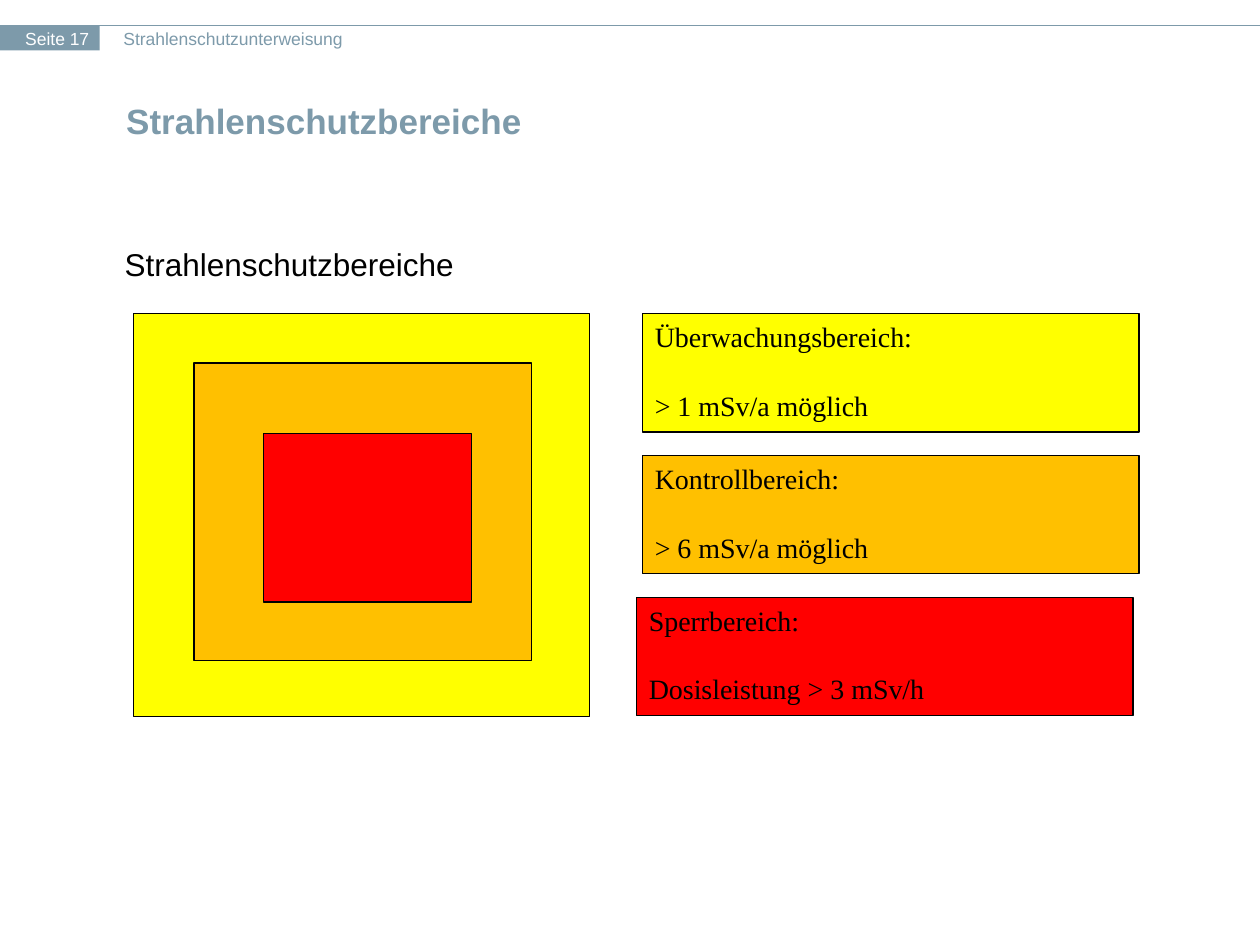
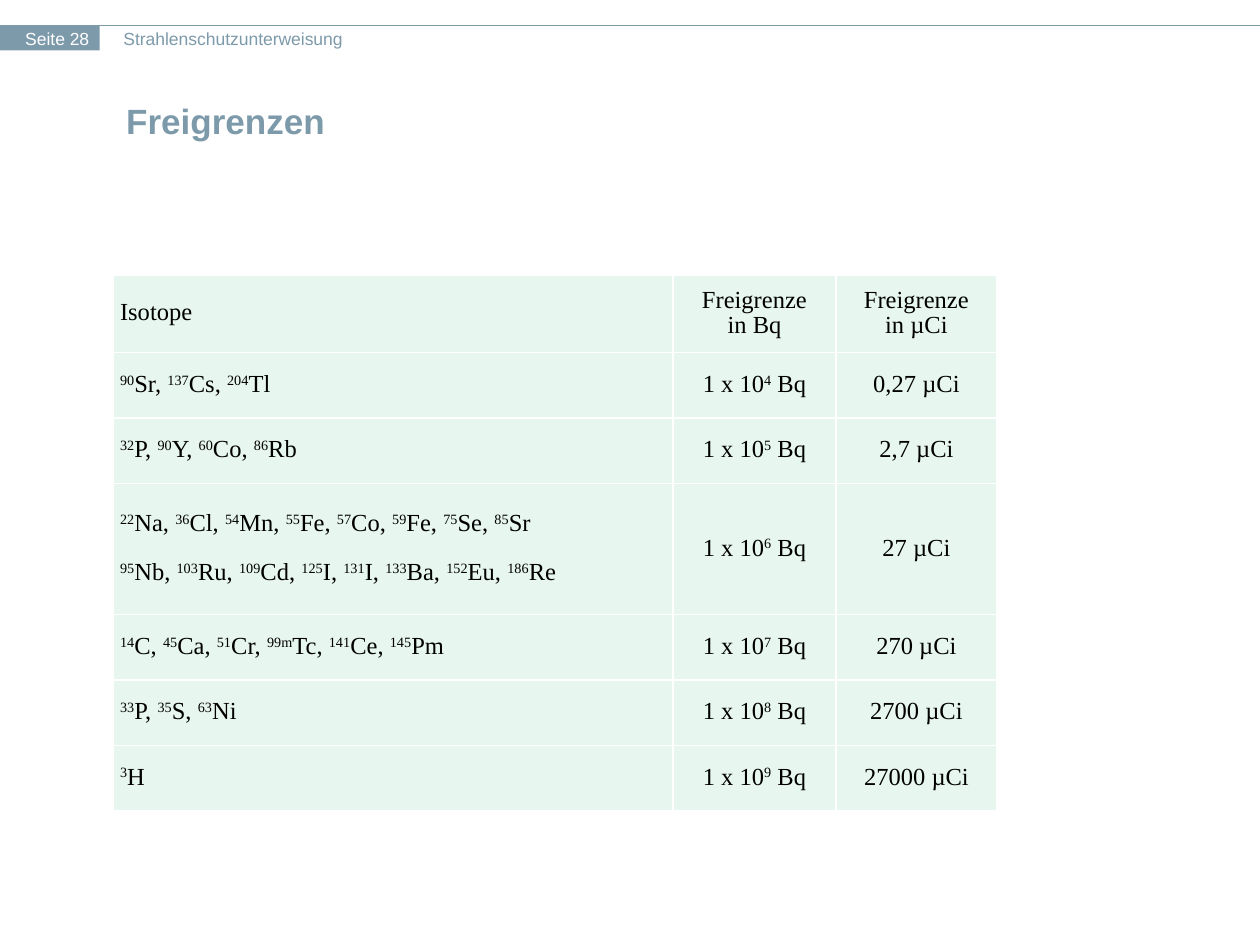
from lxml import etree
from pptx import Presentation
from pptx import util as u
from pptx.dml.color import RGBColor
from pptx.enum import shapes, text
from pptx.oxml import ns

SLATE, BLACK, WHITE, MINT = "7D9AAA", "000000", "FFFFFF", "E7F6EF"
YELLOW, ORANGE, RED = "FFFF00", "FFC000", "FF0000"
SANS, SERIF = "Arial", "Times New Roman"
LEFT, CENTER = text.PP_ALIGN.LEFT, text.PP_ALIGN.CENTER
TOP, MIDDLE = text.MSO_ANCHOR.TOP, text.MSO_ANCHOR.MIDDLE

COURSE = "Strahlenschutzunterweisung"
AREAS_TITLE, AREAS_PAGE = "Strahlenschutzbereiche", 17
LIMITS_TITLE, LIMITS_PAGE = "Freigrenzen", 28

# Colour, nested rectangle (cm), left edge of the legend box (cm), legend lines
AREAS = [
    (YELLOW, (2.69, 6.32, 9.19, 8.13), 12.95, ["Überwachungsbereich:", "> 1 mSv/a möglich"]),
    (ORANGE, (3.91, 7.32, 6.81, 5.99), 12.95, ["Kontrollbereich:", "> 6 mSv/a möglich"]),
    (RED, (5.31, 8.74, 4.19, 3.4), 12.83, ["Sperrbereich:", "Dosisleistung > 3 mSv/h"]),
]
LEGEND_TOP, LEGEND_STEP, LEGEND_WIDTH, LEGEND_HEIGHT = 6.32, 2.86, 10.01, 2.39

# Text between two carets is superscript
LIMITS_HEADER = ["Isotope", "Freigrenze\nin Bq", "Freigrenze\nin µCi"]
LIMITS = [  # isotope lines, power of ten in Bq, limit in µCi
    (["^90^Sr, ^137^Cs, ^204^Tl"], 4, "0,27"),
    (["^32^P, ^90^Y, ^60^Co, ^86^Rb"], 5, "2,7"),
    (["^22^Na, ^36^Cl, ^54^Mn, ^55^Fe, ^57^Co, ^59^Fe, ^75^Se, ^85^Sr",
      "^95^Nb, ^103^Ru, ^109^Cd, ^125^I, ^131^I, ^133^Ba, ^152^Eu, ^186^Re"], 6, "27"),
    (["^14^C, ^45^Ca, ^51^Cr, ^99m^Tc, ^141^Ce, ^145^Pm"], 7, "270"),
    (["^33^P, ^35^S, ^63^Ni"], 8, "2700"),
    (["^3^H"], 9, "27000"),
]
COLUMN_WIDTHS = [11.28, 3.28, 3.25]
HEADER_HEIGHT, LINE_HEIGHT = 1.57, 1.32


def color(hex_string):
    return RGBColor.from_string(hex_string)


def cm(*lengths):
    return [u.Cm(length) for length in lengths]


def add_runs(paragraph, marked_text, size, font, hex_color, bold=False):
    """Add runs; carets enclose superscript, a newline is a line break."""
    for line_number, line in enumerate(marked_text.split("\n")):
        if line_number:
            paragraph.add_line_break()
        for index, part in enumerate(line.split("^")):
            if not part:
                continue
            run = paragraph.add_run()
            run.text = part
            run.font.size, run.font.name, run.font.bold = u.Pt(size), font, bold
            run.font.color.rgb = color(hex_color)
            if index % 2:
                run.font._element.set("baseline", "30000")


def write(frame, lines, size, font, hex_color, bold=False, align=LEFT, spacing=None, gap=0):
    """Write one paragraph per line, with gap points between paragraphs."""
    for index, line in enumerate(lines):
        paragraph = frame.add_paragraph() if index else frame.paragraphs[0]
        paragraph.alignment = align
        paragraph.space_before = u.Pt(gap if index else 0)
        if spacing:
            paragraph.line_spacing = u.Pt(spacing)
        add_runs(paragraph, line, size, font, hex_color, bold)


def add_rectangle(slide, box, fill, line):
    shape = slide.shapes.add_shape(shapes.MSO_SHAPE.RECTANGLE, *cm(*box))
    shape.shadow.inherit = False
    shape.fill.solid()
    shape.fill.fore_color.rgb = color(fill)
    if line:
        shape.line.color.rgb = color(line)
        shape.line.width = u.Pt(0.75)
    else:
        shape.line.fill.background()
    return shape


def add_label(slide, box, label, hex_color):
    frame = slide.shapes.add_textbox(*cm(*box)).text_frame
    frame.word_wrap = True
    frame.margin_left = frame.margin_top = frame.margin_right = frame.margin_bottom = 0
    write(frame, [label], 10, SANS, hex_color)


def fill_placeholder(placeholder, box, line, anchor, **style):
    placeholder.left, placeholder.top, placeholder.width, placeholder.height = cm(*box)
    frame = placeholder.text_frame
    frame.auto_size = text.MSO_AUTO_SIZE.NONE
    frame.vertical_anchor = anchor
    write(frame, [line], **style)


def add_page(presentation, layout_index, title, page):
    """Add a slide with the shared header band and title."""
    slide = presentation.slides.add_slide(presentation.slide_layouts[layout_index])
    rule = slide.shapes.add_connector(shapes.MSO_CONNECTOR.STRAIGHT, *cm(0, 0.51, 25.4, 0.51))
    rule.line.color.rgb = color(SLATE)
    rule.line.width = u.Pt(0.75)
    etree.SubElement(rule._element.spPr, ns.qn("a:effectLst"))
    add_rectangle(slide, (0, 0.51, 2.01, 0.51), SLATE, None)
    add_label(slide, (2.49, 0.56, 16.76, 0.43), COURSE, SLATE)
    add_label(slide, (0.51, 0.56, 1.57, 0.43), f"Seite {page}", WHITE)
    fill_placeholder(slide.shapes.title, (2.29, 1.52, 21.67, 1.83), title, MIDDLE,
                     size=20, font=SANS, hex_color=SLATE, bold=True, spacing=23.9)
    return slide


def add_areas_slide(presentation):
    slide = add_page(presentation, 1, AREAS_TITLE, AREAS_PAGE)
    body = slide.placeholders[1]
    fill_placeholder(body, (2.26, 4.88, 20.96, 10.16), AREAS_TITLE, TOP,
                     size=18, font=SANS, hex_color=BLACK, spacing=19.9)
    properties = body.text_frame.paragraphs[0]._p.get_or_add_pPr()
    properties.set("marL", str(u.Cm(0.97)))
    properties.set("indent", str(-u.Cm(0.97)))
    etree.SubElement(properties, ns.qn("a:buNone"))

    for index, (fill, area_box, legend_left, lines) in enumerate(AREAS):
        add_rectangle(slide, area_box, fill, BLACK)
        legend_box = (legend_left, LEGEND_TOP + index * LEGEND_STEP, LEGEND_WIDTH, LEGEND_HEIGHT)
        frame = add_rectangle(slide, legend_box, fill, BLACK).text_frame
        frame.vertical_anchor = TOP
        write(frame, lines, 16, SERIF, BLACK, gap=20)


def format_cell(cell):
    properties = cell._tc.get_or_add_tcPr()
    for side in ("lnL", "lnR", "lnT", "lnB"):
        border = etree.SubElement(properties, ns.qn(f"a:{side}"), w=str(u.Pt(1)))
        fill = etree.SubElement(border, ns.qn("a:solidFill"))
        etree.SubElement(fill, ns.qn("a:srgbClr"), val=WHITE)
    cell.fill.solid()
    cell.fill.fore_color.rgb = color(MINT)
    cell.vertical_anchor = MIDDLE
    cell.margin_left = cell.margin_right = u.Cm(0.13)
    cell.margin_top = cell.margin_bottom = 0


def add_limits_slide(presentation):
    slide = add_page(presentation, 5, LIMITS_TITLE, LIMITS_PAGE)
    rows = [[[heading] for heading in LIMITS_HEADER]]
    rows += [[isotopes, [f"1 x 10^{power}^ Bq"], [f"{limit} µCi"]]
             for isotopes, power, limit in LIMITS]
    heights = [HEADER_HEIGHT] + [LINE_HEIGHT * len(isotopes) for isotopes, _, _ in LIMITS]
    table = slide.shapes.add_table(len(rows), len(COLUMN_WIDTHS), *cm(
        2.29, 5.54, sum(COLUMN_WIDTHS), sum(heights))).table
    table.first_row = table.horz_banding = False
    for column, width in zip(table.columns, COLUMN_WIDTHS):
        column.width = u.Cm(width)
    for row_index, row in enumerate(rows):
        table.rows[row_index].height = u.Cm(heights[row_index])
        for column_index, lines in enumerate(row):
            cell = table.cell(row_index, column_index)
            format_cell(cell)
            write(cell.text_frame, lines, 14, SERIF, BLACK,
                  align=CENTER if column_index else LEFT, spacing=14, gap=14)


def main():
    presentation = Presentation()
    presentation.slide_width, presentation.slide_height = cm(25.4, 19.05)
    add_areas_slide(presentation)
    add_limits_slide(presentation)
    presentation.save("out.pptx")


if __name__ == "__main__":
    main()
